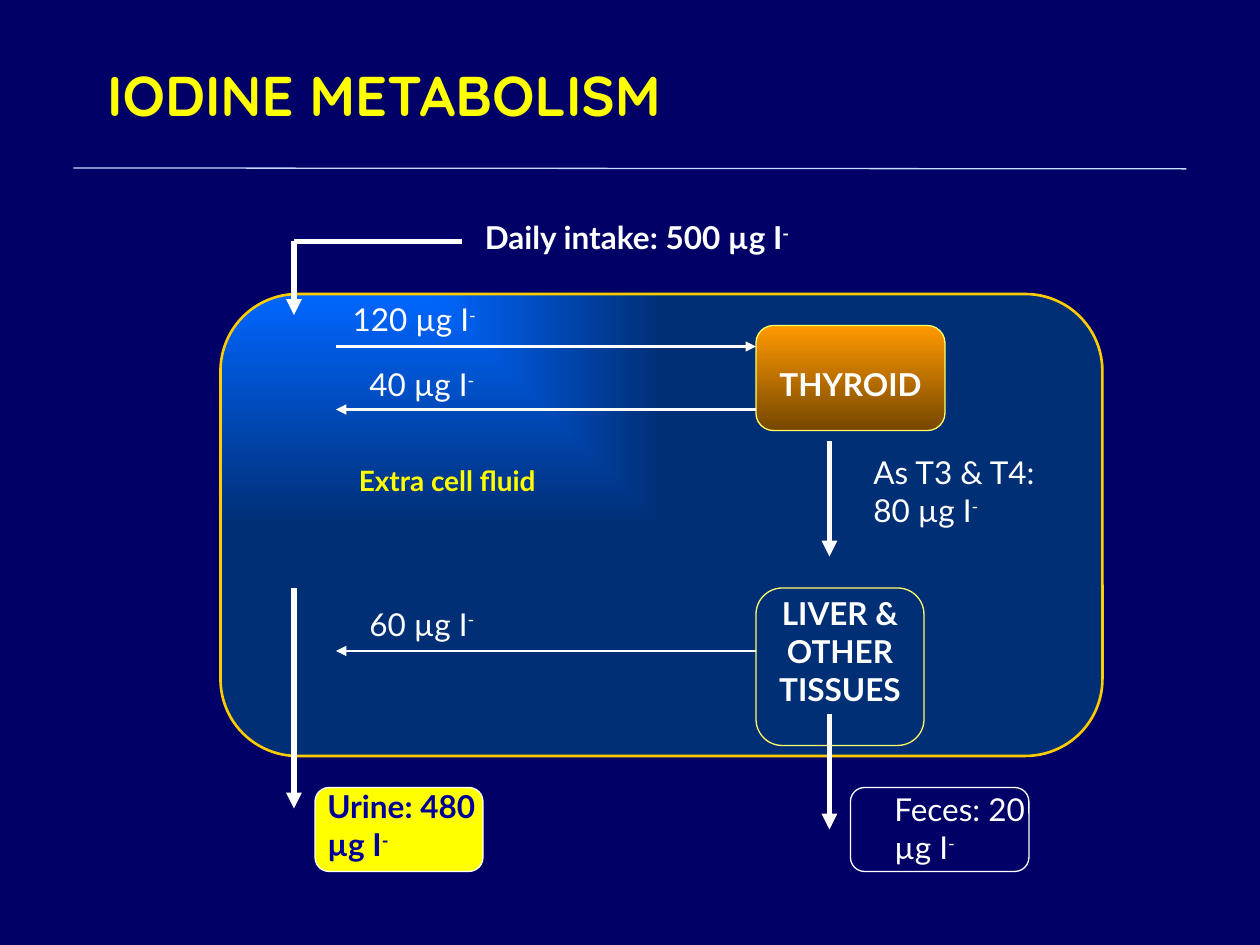
"""Build the iodine metabolism slide."""
from lxml import etree
from pptx import Presentation
from pptx.dml.color import RGBColor
from pptx.enum.shapes import MSO_CONNECTOR, MSO_SHAPE
from pptx.enum.text import MSO_ANCHOR, MSO_AUTO_SIZE, PP_ALIGN
from pptx.oxml import parse_xml
from pptx.oxml.ns import qn
from pptx.util import Pt

ROUNDED = MSO_SHAPE.FLOWCHART_ALTERNATE_PROCESS
STRAIGHT = MSO_CONNECTOR.STRAIGHT
MIDDLE = MSO_ANCHOR.MIDDLE
GROW = MSO_AUTO_SIZE.SHAPE_TO_FIT_TEXT
LEFT, CENTER = PP_ALIGN.LEFT, PP_ALIGN.CENTER
WHITE, YELLOW = "FFFFFF", "FFFF00"
A_NS = "http://schemas.openxmlformats.org/drawingml/2006/main"
CORNER = (f'<a:path xmlns:a="{A_NS}" path="rect">'
          '<a:fillToRect r="100000" b="100000"/></a:path>')


def rgb(value):
    return RGBColor.from_string(value)


class Deck:
    """Hold the style and the current slide."""

    def __init__(self, prs, background):
        self.s = prs.slides.add_slide(prs.slide_layouts[5])
        self.s.background.fill.solid()
        self.s.background.fill.fore_color.rgb = rgb(background)
        self.base = {"name": "Lato", "size": Pt(18), "bold": False}

    def run(self, p, text, color, **fmt):
        r = p.add_run()
        r.text = text
        for key, value in {**self.base, **fmt}.items():
            setattr(r.font, key, value)
        r.font.color.rgb = rgb(color)
        return r

    def title(self, box, text):
        sp = self.s.shapes.title
        for key, value in zip(("left", "top", "width", "height"), box):
            setattr(sp, key, Pt(value))
        sp.text_frame.vertical_anchor = MIDDLE
        p = sp.text_frame.paragraphs[0]
        p.alignment = LEFT
        self.run(p, text, YELLOW, name="Quicksand", size=Pt(32), bold=True)

    def text(self, box, text, color=WHITE, align=LEFT, ion=False, **fmt):
        tf = self.s.shapes.add_textbox(*map(Pt, box)).text_frame
        tf.word_wrap = True
        tf.auto_size = GROW
        p = tf.paragraphs[0]
        p.alignment = align
        self.run(p, text, color, **fmt)
        if ion:
            r = self.run(p, "-", color, **fmt)
            r.font._element.set("baseline", "30000")

    def box(self, box, line, width=0.75, fill=(), from_corner=False):
        sp = self.s.shapes.add_shape(ROUNDED, *map(Pt, box))
        sp.shadow.inherit = False
        sp.line.color.rgb = rgb(line)
        sp.line.width = Pt(width)
        if not fill:
            sp.fill.background()
        elif len(fill) == 1:
            sp.fill.solid()
            sp.fill.fore_color.rgb = rgb(fill[0])
        else:
            sp.fill.gradient()
            sp.fill.gradient_angle = 270
            for stop, color, at in zip(sp.fill.gradient_stops, fill, (0, 1)):
                stop.color.rgb = rgb(color)
                stop.position = at
        if from_corner:
            lin = sp._element.spPr.find(f".//{qn('a:lin')}")
            lin.getparent().replace(lin, parse_xml(CORNER))

    def line(self, x1, y1, x2, y2, width=3, color=WHITE, arrow=True):
        c = self.s.shapes.add_connector(STRAIGHT, *map(Pt, (x1, y1, x2, y2)))
        c.line.color.rgb = rgb(color)
        c.line.width = Pt(width)
        if arrow:
            etree.SubElement(c.line._get_or_add_ln(), qn("a:tailEnd"), type="triangle")
        etree.SubElement(c._element.spPr, qn("a:effectLst"))


def main():
    prs = Presentation()
    prs.slide_width, prs.slide_height = Pt(720), Pt(540)
    d = Deck(prs, "000066")

    d.title((54, 24, 594, 60), "IODINE METABOLISM")
    d.line(42, 96, 678, 96.5, 0.75, "C7DDFF", arrow=False)

    d.box((126, 168, 504, 264), "FFCC00", 1.5, ("0066FF", "002F76"), from_corner=True)
    d.box((180, 450, 96, 48), WHITE, fill=(YELLOW,))
    d.box((432, 186, 108, 60), "FFFF66", fill=("FF9900", "764700"))
    d.box((432, 336, 96, 90), "FFFF66")
    d.box((486, 450, 102, 48), WHITE)

    for box, text in (
        ((194.4, 168, 132, 29), "120 µg I"),
        ((204, 205, 102, 29), "40 µg I"),
        ((204, 342, 102, 29), "60 µg I"),
        ((504, 448, 90, 50), "Feces: 20 µg I"),
        ((492, 255.6, 114, 50), "As T3 & T4: 80 µg I"),
    ):
        d.text(box, text, ion=True)
    d.text((180, 446.4, 108, 50), "Urine: 480 µg I", "000099", ion=True, bold=True)
    d.text((270, 121, 234, 29), "Daily intake: 500 µg I", ion=True, bold=True)
    d.text((426, 205, 120, 29), "THYROID", align=CENTER, bold=True)
    d.text((420, 336, 120, 72), "LIVER & OTHER TISSUES", align=CENTER, bold=True)
    d.text((198, 261.6, 174, 27), "Extra cell fluid", YELLOW, size=Pt(16), bold=True)

    for x1, x2, y in ((192, 432, 198), (432, 192, 234), (432, 192, 372)):
        d.line(x1, y, x2, y, 1.5)
    for x, y1, y2 in ((168, 138, 180), (168, 336, 462), (474, 252, 318), (474, 408, 474)):
        d.line(x, y1, x, y2)
    d.line(168, 138, 264, 138, arrow=False)

    prs.save("out.pptx")


if __name__ == "__main__":
    main()
